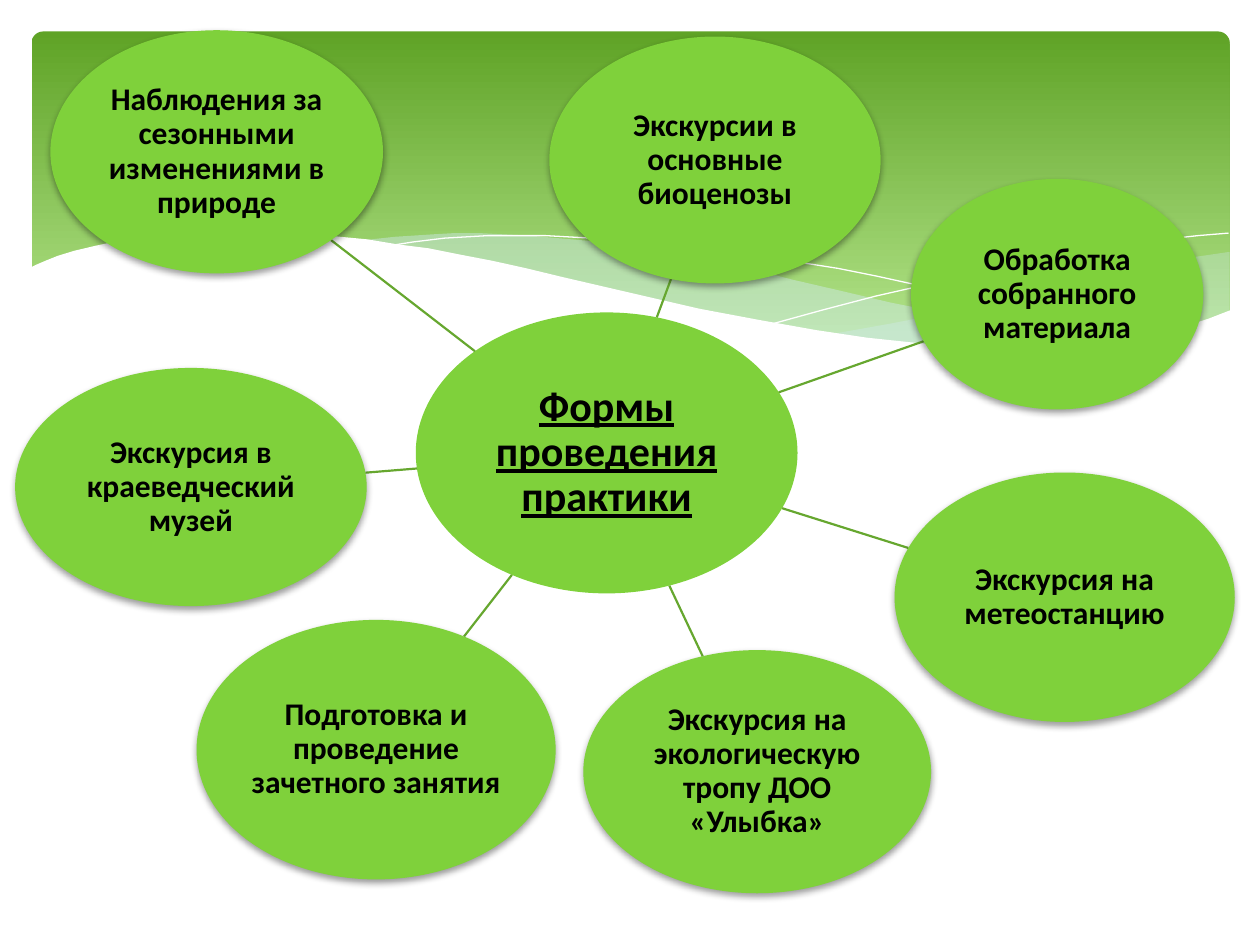
from math import hypot

from lxml.etree import SubElement
from pptx import Presentation
from pptx.dml.color import RGBColor
from pptx.enum.shapes import MSO_CONNECTOR as Link, MSO_SHAPE as Preset
from pptx.enum.text import MSO_ANCHOR as Anchor, PP_ALIGN as Align
from pptx.oxml.ns import qn
from pptx.util import Pt

EMU_PER_PX = 9144
WHITE = RGBColor(0xFF, 0xFF, 0xFF)
BLACK = RGBColor(0x00, 0x00, 0x00)
GREEN = RGBColor(0x7F, 0xD1, 0x3B)
LINK_GREEN = RGBColor(0x66, 0xA7, 0x2F)
BANNER_TOP = RGBColor(0x5F, 0xA3, 0x26)
BANNER_BOTTOM = RGBColor(0xB2, 0xE3, 0x89)
PALE_BLUE = RGBColor(0xD6, 0xEC, 0xFF)

BACK_WAVE = [
    (975, 200), (948, 204), (921, 210), (891, 216), (861, 223), (805, 237),
    (753, 248), (706, 257), (661, 265), (691, 269), (719, 272), (745, 275),
    (769, 277), (803, 278), (835, 277), (863, 275), (889, 272), (913, 267),
    (935, 262), (949, 257), (963, 252), (976, 247), (976, 200),
]
FRONT_WAVE = [
    (893, 273), (866, 269), (837, 265), (807, 260), (775, 254), (741, 247),
    (706, 240), (668, 231), (629, 222), (598, 214), (569, 208), (541, 203),
    (514, 198), (489, 194), (465, 191), (442, 189), (420, 187), (399, 186),
    (380, 185), (361, 185), (344, 186), (313, 188), (286, 191), (323, 196),
    (362, 203), (404, 211), (449, 222), (491, 232), (530, 240), (566, 248),
    (601, 255), (634, 261), (665, 266), (695, 270), (722, 274), (748, 276),
    (773, 277), (796, 278), (828, 278), (857, 277), (876, 275), (893, 273),
]
LONG_CURVE = [
    (309, 195), (328, 192), (353, 189), (387, 187), (433, 187), (469, 189),
    (510, 192), (556, 197), (608, 204), (665, 213), (695, 219), (727, 226),
    (760, 233), (795, 241), (831, 251), (869, 261), (907, 272),
]
SHORT_CURVE = [
    (613, 257), (653, 246), (695, 235), (748, 223), (806, 210), (866, 199),
    (895, 194), (924, 190), (951, 187), (975, 185),
]
WHITE_WAVE = [
    (977, 246), (959, 253), (940, 259), (920, 265), (899, 269), (875, 273),
    (850, 275), (823, 277), (793, 276), (761, 275), (726, 272), (688, 268),
    (648, 262), (603, 254), (555, 245), (503, 233), (447, 220), (418, 213),
    (391, 207), (365, 202), (340, 197), (316, 194), (292, 190), (271, 188),
    (250, 186), (230, 185), (211, 184), (177, 184), (146, 185), (119, 187),
    (95, 191), (76, 195), (59, 199), (46, 203), (36, 207), (29, 210),
    (23, 213), (23, 329), (977, 329),
]

HUB = (330, 248, 303, 223)
SATELLITES = [
    ("Наблюдения за сезонными изменениями в природе", (40, 24, 264, 193)),
    ("Экскурсии в основные биоценозы", (436, 29, 263, 196)),
    ("Экскурсия на метеостанцию", (710, 375, 270, 198)),
    ("Экскурсия в краеведческий музей", (12, 292, 279, 189)),
    ("Экскурсия на экологическую тропу ДОО «Улыбка»", (463, 516, 276, 193)),
    ("Обработка собранного материала", (723, 142, 232, 183)),
    ("Подготовка и проведение зачетного занятия", (156, 492, 285, 206)),
]


def px(length):
    return round(length * EMU_PER_PX)


def center(box):
    left, top, width, height = box
    return left + width / 2, top + height / 2


def rim_point(box, target):
    x, y = center(box)
    dx, dy = target[0] - x, target[1] - y
    reach = 1 / hypot(dx / (box[2] / 2), dy / (box[3] / 2))
    return x + dx * reach, y + dy * reach


class SlidePainter:
    font = "Calibri"

    def __init__(self, page):
        self.page = page

    def preset(self, kind, box):
        shape = self.page.shapes.add_shape(kind, *map(px, box))
        shape.shadow.inherit = False
        shape.line.fill.background()
        return shape

    def banner(self, box):
        shape = self.preset(Preset.ROUNDED_RECTANGLE, box)
        shape.adjustments[0] = 0.034
        shape.fill.gradient()
        shape.fill.gradient_angle = 270
        colors = (0, BANNER_TOP), (0.9, BANNER_BOTTOM)
        for stop, (position, color) in zip(shape.fill.gradient_stops, colors):
            stop.position = position
            stop.color.rgb = color

    def outline(self, points, closed):
        builder = self.page.shapes.build_freeform(*points[0], scale=EMU_PER_PX)
        builder.add_line_segments(points[1:], close=closed)
        shape = builder.convert_to_shape()
        shape.shadow.inherit = False
        return shape

    def wave(self, points, color, opacity=100):
        shape = self.outline(points, True)
        shape.line.fill.background()
        shape.fill.solid()
        shape.fill.fore_color.rgb = color
        if opacity < 100:
            tint = shape.fill._xPr.find(qn("a:solidFill"))[0]
            SubElement(tint, qn("a:alpha"), val=str(opacity * 1000))

    def curve(self, points):
        shape = self.outline(points, False)
        shape.fill.background()
        shape.line.color.rgb = WHITE
        shape.line.width = 0

    def bubble(self, text, box, size, inset, underline=False, shadow=True):
        shape = self.preset(Preset.OVAL, box)
        shape.fill.solid()
        shape.fill.fore_color.rgb = GREEN
        if shadow:
            self.drop_shadow(shape)
        frame = shape.text_frame
        frame.word_wrap = True
        frame.vertical_anchor = Anchor.MIDDLE
        frame.margin_left = frame.margin_right = px(inset)
        frame.margin_top = frame.margin_bottom = px(inset)
        para = frame.paragraphs[0]
        para.alignment = Align.CENTER
        para.line_spacing = 0.9
        span = para.add_run()
        span.text = text
        span.font.name = self.font
        span.font.size = Pt(size)
        span.font.bold = True
        span.font.underline = underline
        span.font.color.rgb = BLACK

    def drop_shadow(self, shape):
        effects = shape._element.spPr.find(qn("a:effectLst"))
        cast = SubElement(effects, qn("a:outerShdw"), blurRad=str(Pt(4)),
                          dist=str(Pt(2)), dir="5400000", rotWithShape="0")
        color = SubElement(cast, qn("a:srgbClr"), val=str(BLACK))
        SubElement(color, qn("a:alpha"), val="38000")

    def link(self, start, end):
        line = self.page.shapes.add_connector(
            Link.STRAIGHT, *map(px, (*start, *end)))
        line.line.color.rgb = LINK_GREEN
        line.line.width = Pt(1.25)
        SubElement(line._element.spPr, qn("a:effectLst"))


def main():
    deck = Presentation()
    deck.slide_width, deck.slide_height = px(1000), px(750)
    painter = SlidePainter(deck.slides.add_slide(deck.slide_layouts[6]))

    painter.banner((25, 25, 951, 270))
    painter.wave(BACK_WAVE, PALE_BLUE, 29)
    painter.wave(FRONT_WAVE, PALE_BLUE, 40)
    painter.curve(LONG_CURVE)
    painter.curve(SHORT_CURVE)
    painter.wave(WHITE_WAVE, WHITE)

    painter.bubble("Формы проведения практики", HUB, 24, 2,
                   underline=True, shadow=False)
    for text, box in SATELLITES:
        painter.link(rim_point(HUB, center(box)), rim_point(box, center(HUB)))
        painter.bubble(text, box, 18, 1)

    deck.save("out.pptx")


if __name__ == "__main__":
    main()
